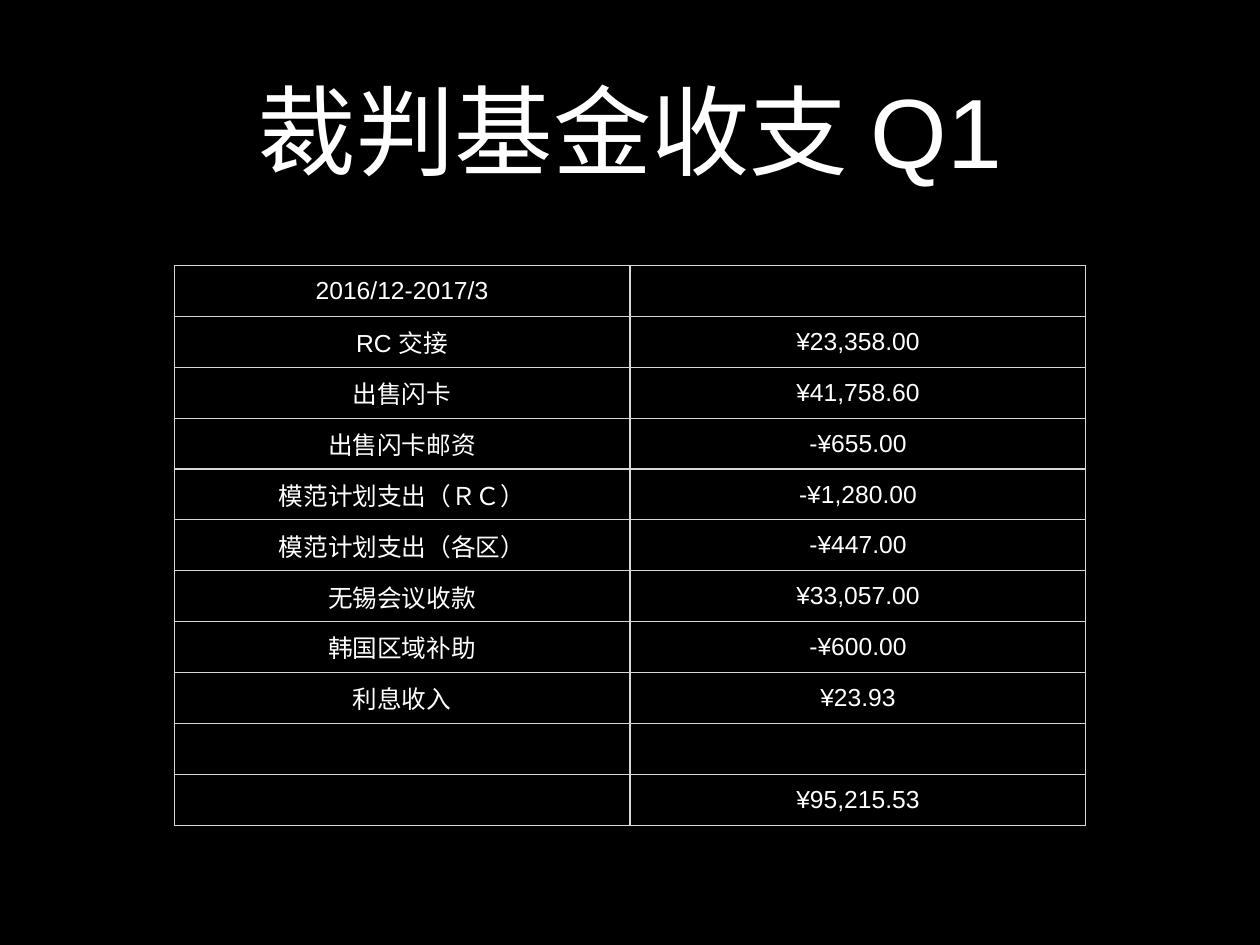
from lxml import etree
from pptx import Presentation
from pptx import util as u
from pptx.dml.color import RGBColor
from pptx.enum import text
from pptx.oxml import ns

BLACK = RGBColor(0x00, 0x00, 0x00)
WHITE = RGBColor(0xFF, 0xFF, 0xFF)
GRAY = RGBColor(0xD6, 0xD7, 0xD6)

ROWS = [
    ("2016/12-2017/3", ""),
    ("RC 交接", "¥23,358.00"),
    ("出售闪卡", "¥41,758.60"),
    ("出售闪卡邮资", "-¥655.00"),
    ("模范计划支出（ＲＣ）", "-¥1,280.00"),
    ("模范计划支出（各区）", "-¥447.00"),
    ("无锡会议收款", "¥33,057.00"),
    ("韩国区域补助", "-¥600.00"),
    ("利息收入", "¥23.93"),
    ("", ""),
    ("", "¥95,215.53"),
]


def apply(item, form):
    for name, value in form.items():
        setattr(item, name, value)


class Deck:
    font = {"name": "Arial", "bold": False}
    inset = u.Cm(0.15)
    pad = {"margin_left": u.Cm(0.18), "margin_right": u.Cm(0.18),
           "margin_top": 0, "margin_bottom": 0,
           "vertical_anchor": text.MSO_ANCHOR.MIDDLE}

    def __init__(self, wide, high):
        self.prs = Presentation()
        apply(self.prs, {"slide_width": u.Cm(wide), "slide_height": u.Cm(high)})
        self.slide = self.prs.slides.add_slide(self.prs.slide_layouts[5])
        fill = self.slide.background.fill
        fill.solid()
        fill.fore_color.rgb = BLACK

    def label(self, para, words, size):
        para.alignment = text.PP_ALIGN.CENTER
        run = para.add_run()
        run.text = words
        apply(run.font, {**self.font, "size": u.Pt(size)})
        run.font.color.rgb = WHITE

    def title(self, words, left, top, wide, high, size):
        shape = self.slide.shapes.title
        apply(shape, {"left": u.Cm(left), "top": u.Cm(top),
                      "width": u.Cm(wide), "height": u.Cm(high)})
        frame = shape.text_frame
        apply(frame, {f"margin_{side}": self.inset
                      for side in ("left", "top", "right", "bottom")})
        apply(frame, {"vertical_anchor": text.MSO_ANCHOR.MIDDLE,
                      "auto_size": text.MSO_AUTO_SIZE.NONE, "word_wrap": True})
        self.label(frame.paragraphs[0], words, size)

    def border(self, cell):
        props = cell._tc.get_or_add_tcPr()
        for spot, tag in enumerate(("a:lnL", "a:lnR", "a:lnT", "a:lnB")):
            line = etree.Element(ns.qn(tag), w=str(u.Pt(1)))
            fill = etree.SubElement(line, ns.qn("a:solidFill"))
            etree.SubElement(fill, ns.qn("a:srgbClr"), val=str(GRAY))
            props.insert(spot, line)

    def table(self, rows, left, top, col, row, size):
        count, cols = len(rows), len(rows[0])
        grid = self.slide.shapes.add_table(
            count, cols, u.Cm(left), u.Cm(top),
            u.Cm(col * cols), u.Cm(row * count)).table
        apply(grid, {"first_row": False, "horz_banding": False})
        for line, values in zip(grid.rows, rows):
            for cell, words in zip(line.cells, values):
                apply(cell, self.pad)
                cell.fill.background()
                self.border(cell)
                if words:
                    self.label(cell.text_frame.paragraphs[0], words, size)

    def save(self):
        self.prs.save("out.pptx")


def main():
    deck = Deck(36.12, 27.1)
    deck.title("裁判基金收支 Q1", 2.64, 0.71, 30.84, 6, 80)
    deck.table(ROWS, 4.99, 7.61, 13.07, 1.46, 20)
    deck.save()


if __name__ == "__main__":
    main()
